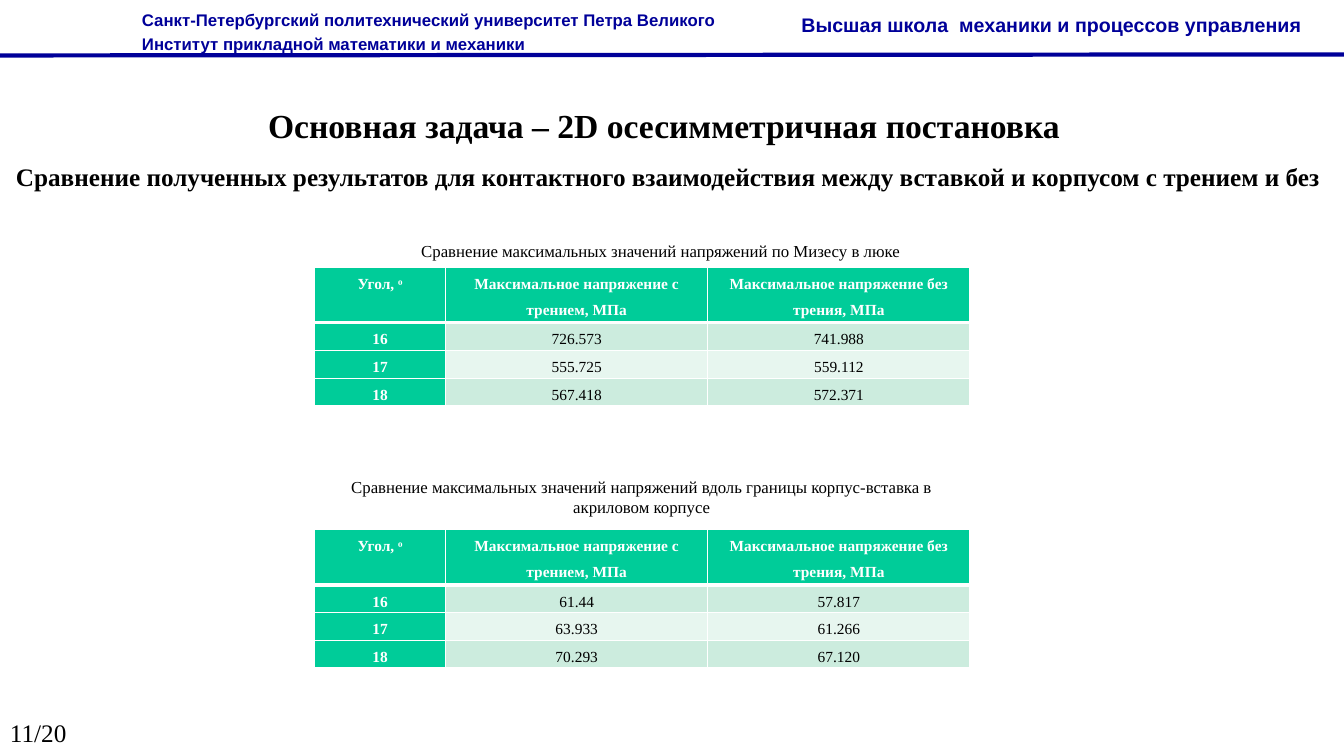
from pptx import Presentation
from pptx.dml.color import RGBColor
from pptx.enum import shapes as sh, text as tx
from pptx.oxml import parse_xml
from pptx.oxml.ns import nsdecls
from pptx.util import Inches, Pt

NAVY = RGBColor(0x00, 0x00, 0x99)
BLACK = RGBColor(0x00, 0x00, 0x00)
WHITE = RGBColor(0xFF, 0xFF, 0xFF)
GREEN = RGBColor(0x00, 0xCC, 0x99)
MINT = RGBColor(0xCC, 0xEC, 0xDE)
PALE = RGBColor(0xE7, 0xF6, 0xEF)
SERIF = "Times New Roman"
HEADS = ("Угол, ᵒ", "Максимальное напряжение с трением, МПа",
         "Максимальное напряжение без трения, МПа")


def style(par, size, color, bold, face=SERIF):
    font = par.font
    font.name, font.size, font.bold = face, Pt(size), bold
    font.color.rgb = color


def label(slide, box, words, size, color=BLACK, bold=False, face=SERIF,
          space=None, center=False):
    frame = slide.shapes.add_textbox(*map(Inches, box)).text_frame
    frame.word_wrap = True
    par = frame.paragraphs[0]
    par.text = words
    par.line_spacing = space
    if center:
        par.alignment = tx.PP_ALIGN.CENTER
        frame.vertical_anchor = tx.MSO_ANCHOR.MIDDLE
    style(par, size, color, bold, face)


def rule(slide, start, end):
    line = slide.shapes.add_connector(
        sh.MSO_CONNECTOR.STRAIGHT, *map(Inches, start + end))
    line.line.color.rgb = NAVY
    line.line.width = Pt(3)
    line._element.spPr.append(parse_xml(f"<a:effectLst {nsdecls('a')}/>"))


def border(cell, low):
    props = cell._tc.get_or_add_tcPr()
    for n, (side, width) in enumerate(
            (("L", 1), ("R", 1), ("T", 1), ("B", low))):
        props.insert(n, parse_xml(
            f'<a:ln{side} {nsdecls("a")} w="{Pt(width)}"><a:solidFill>'
            f'<a:srgbClr val="{WHITE}"/></a:solidFill></a:ln{side}>'))


def fill_cell(cell, words, back, strong, low):
    cell.margin_left = cell.margin_right = Inches(0.07)
    cell.margin_top = cell.margin_bottom = 0
    cell.fill.solid()
    cell.fill.fore_color.rgb = back
    par = cell.text_frame.paragraphs[0]
    par.text = words
    par.alignment = tx.PP_ALIGN.CENTER
    par.line_spacing = 1.5
    par.space_after = Pt(8)
    style(par, 11, WHITE if strong else BLACK, strong)
    border(cell, low)


def stress_table(slide, top, data):
    rows = (HEADS,) + data
    grid = slide.shapes.add_table(
        len(rows), len(HEADS), Inches(3.12), Inches(top),
        Inches(6.49), Inches(1.36)).table
    for col, width in zip(grid.columns, (1.3, 2.6, 2.6)):
        col.width = Inches(width)
    for r, row in enumerate(rows):
        grid.rows[r].height = Inches(0.27 if r else 0.55)
        for c, words in enumerate(row):
            strong = r == 0 or c == 0
            back = GREEN if strong else MINT if r % 2 else PALE
            fill_cell(grid.cell(r, c), words, back, strong, 1 if r else 3)


def main():
    prs = Presentation()
    prs.slide_width, prs.slide_height = Inches(13.33), Inches(7.5)
    slide = prs.slides.add_slide(prs.slide_layouts[6])

    # Header band
    rule(slide, (-0.03, 0.55), (13.33, 0.54))
    label(slide, (1.31, 0.01, 6.17, 0.56),
          "Санкт-Петербургский политехнический университет Петра Великого\v"
          "Институт прикладной математики и механики",
          12, NAVY, True, "Arial", 1.2)
    label(slide, (7.85, 0.03, 6.14, 0.38),
          "Высшая школа  механики и процессов управления",
          14, NAVY, True, "Arial", 1.2)

    # Titles
    label(slide, (2.56, 0.99, 8.22, 0.5),
          "Основная задача – 2D осесимметричная постановка", 24, bold=True)
    label(slide, (0.06, 1.53, 13.27, 0.76),
          "Сравнение полученных результатов для контактного взаимодействия "
          "между вставкой и корпусом с трением и без",
          18, bold=True, space=1.07)

    # Stress in the hatch
    label(slide, (3.91, 2.34, 5.29, 0.3),
          "Сравнение максимальных значений напряжений по Мизесу в люке",
          12, center=True)
    stress_table(slide, 2.65, (("16", "726.573", "741.988"),
                               ("17", "555.725", "559.112"),
                               ("18", "567.418", "572.371")))

    # Stress along the body boundary
    label(slide, (3.12, 4.68, 6.49, 0.5),
          "Сравнение максимальных значений напряжений вдоль границы "
          "корпус-вставка в акриловом корпусе", 12, center=True)
    stress_table(slide, 5.25, (("16", "61.44", "57.817"),
                               ("17", "63.933", "61.266"),
                               ("18", "70.293", "67.120")))

    # Page number
    label(slide, (0, 7.07, 0.85, 0.4), "11/20", 18)
    prs.save("out.pptx")


if __name__ == "__main__":
    main()
